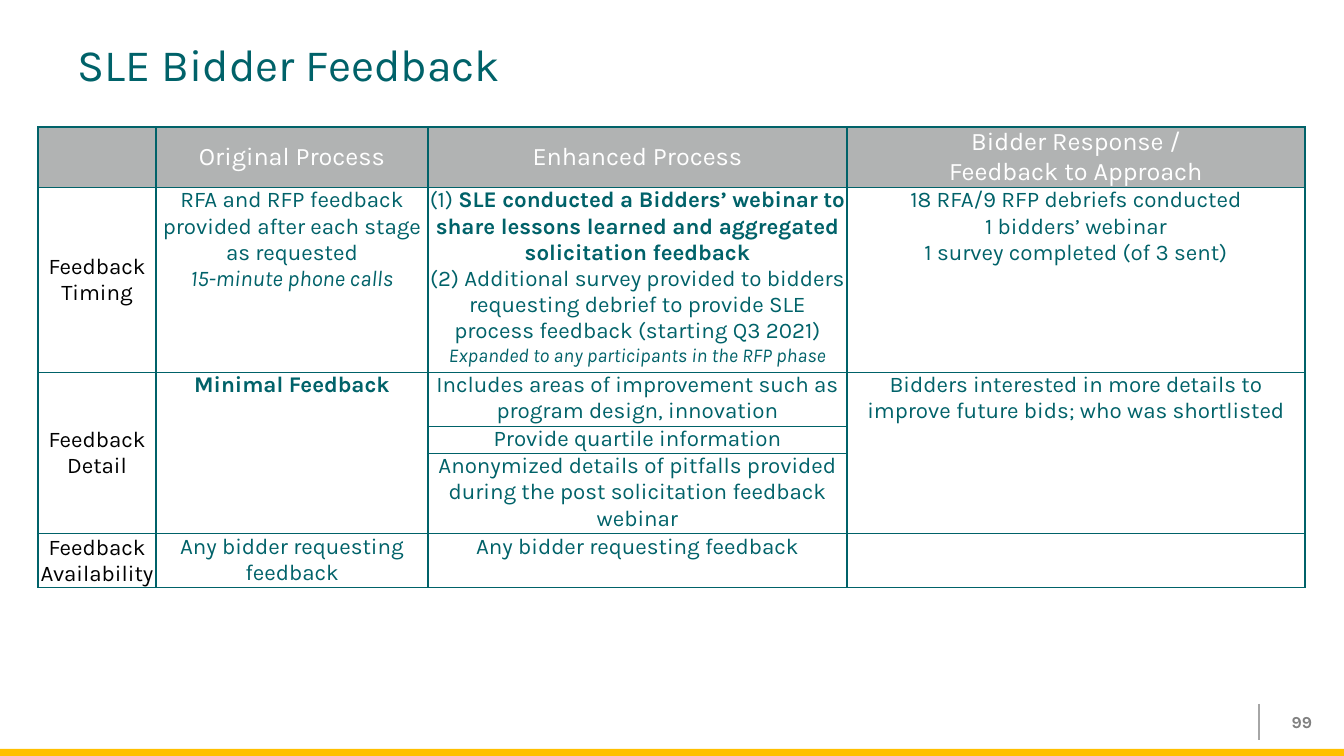
from collections import namedtuple
from pptx import Presentation
from pptx.dml.color import RGBColor
from pptx.enum.shapes import MSO_CONNECTOR as Connector, MSO_SHAPE as Shape
from pptx.enum.text import MSO_ANCHOR as Anchor, PP_ALIGN as Align
from pptx.oxml.ns import qn
from pptx.util import Pt
from lxml.etree import SubElement

TEAL = RGBColor(0x00, 0x62, 0x69)
GOLD = RGBColor(0xFF, 0xC0, 0x00)
HEADER = RGBColor(0xB1, 0xB3, 0xB3)
RULE = RGBColor(0xA6, 0xA6, 0xA6)
NUMBER = RGBColor(0x80, 0x80, 0x80)
WHITE = RGBColor(0xFF, 0xFF, 0xFF)
BLACK = RGBColor(0x00, 0x00, 0x00)
FONT = "Karla"
PX = 914400 / 100.8

Box = namedtuple("Box", "left top width height")
Line = namedtuple("Line", "text size bold italic lead", defaults=(16, False, False, ""))

COLUMNS = [118, 272, 419, 458]
ROWS = [59, 180, 54, 27, 80, 53]
HEADINGS = {
    1: [Line("Original Process", 18)],
    2: [Line("Enhanced Process", 18)],
    3: [Line("Bidder Response /", 18), Line("Feedback to Approach", 18)],
}
LABELS = {1: "Feedback Timing", 2: "Feedback Detail", 5: "Feedback Availability"}
BODY = {
    (1, 1): [Line("RFA and RFP feedback provided after each stage as requested"),
             Line("15-minute phone calls", italic=True)],
    (1, 2): [Line("SLE conducted a Bidders’ webinar to share lessons learned and "
                  "aggregated solicitation feedback", bold=True, lead="(1) "),
             Line("(2) Additional survey provided to bidders requesting debrief to "
                  "provide SLE process feedback (starting Q3 2021)"),
             Line("Expanded to any participants in the RFP phase", 14, italic=True)],
    (1, 3): [Line("18 RFA/9 RFP debriefs conducted"), Line("1 bidders’ webinar"),
             Line("1 survey completed (of 3 sent)")],
    (2, 1): [Line("Minimal Feedback", bold=True)],
    (2, 2): [Line("Includes areas of improvement such as program design, innovation")],
    (2, 3): [Line("Bidders interested in more details to improve future bids; "
                  "who was shortlisted")],
    (3, 2): [Line("Provide quartile information")],
    (4, 2): [Line("Anonymized details of pitfalls provided during the post "
                  "solicitation feedback webinar")],
    (5, 1): [Line("Any bidder requesting feedback")],
    (5, 2): [Line("Any bidder requesting feedback")],
}


def px(length):
    """Turn pixels into EMU."""
    return round(length * PX)


def emu(box):
    """Turn a pixel box into EMU values."""
    return [px(length) for length in box]


def style(font, size, color, bold=False, italic=False):
    """Set the look of a font."""
    font.name, font.size, font.bold, font.italic = FONT, Pt(size), bold, italic
    font.color.rgb = color


def write(frame, lines, color, align):
    """Fill a text frame with one paragraph per line."""
    for index, line in enumerate(lines):
        para = frame.add_paragraph() if index else frame.paragraphs[0]
        para.alignment = align
        style(para.font, line.size, color, line.bold and not line.lead, line.italic)
        if line.lead:
            para.add_run().text = line.lead
        span = para.add_run()
        span.text = line.text
        if line.lead:
            span.font.bold = line.bold


def add_text(page, box, line, color, align):
    """Place one vertically centred line of text."""
    frame = page.shapes.add_textbox(*emu(box)).text_frame
    frame.word_wrap = True
    frame.vertical_anchor = Anchor.MIDDLE
    write(frame, [line], color, align)


def add_border(cell):
    """Draw a thin line on all four sides of a cell."""
    properties = cell._tc.get_or_add_tcPr()
    for side in ("lnL", "lnR", "lnT", "lnB"):
        edge = SubElement(properties, qn(f"a:{side}"), w=str(Pt(1)))
        fill = SubElement(edge, qn("a:solidFill"))
        SubElement(fill, qn("a:srgbClr"), val=str(TEAL))


def fill_cell(cell, lines, color, anchor):
    """Write lines into a cell without margins."""
    cell.margin_left = cell.margin_right = cell.margin_top = cell.margin_bottom = 0
    cell.vertical_anchor = anchor
    write(cell.text_frame, lines, color, Align.CENTER)


def add_feedback_table(page, box):
    """Build the feedback comparison table."""
    table = page.shapes.add_table(len(ROWS), len(COLUMNS), *emu(box)).table
    table.first_row = table.horz_banding = False
    for column, width in zip(table.columns, COLUMNS):
        column.width = px(width)
    for row, height in zip(table.rows, ROWS):
        row.height = px(height)
    for index, row in enumerate(table.rows):
        for cell in row.cells:
            add_border(cell)
            cell.margin_top = cell.margin_bottom = 0
            cell.fill.solid()
            cell.fill.fore_color.rgb = WHITE if index else HEADER
    for column in (0, 1, 3):
        table.cell(2, column).merge(table.cell(4, column))
    for column, lines in HEADINGS.items():
        fill_cell(table.cell(0, column), lines, WHITE, Anchor.MIDDLE)
    for row, label in LABELS.items():
        fill_cell(table.cell(row, 0), [Line(label)], BLACK, Anchor.MIDDLE)
    for place, lines in BODY.items():
        fill_cell(table.cell(*place), lines, TEAL, Anchor.TOP)


def add_footer(page, box):
    """Draw the gold strip, the rule and the page number."""
    strip_top = box.top + box.height - 7
    strip = page.shapes.add_shape(Shape.RECTANGLE, *emu((box.left, strip_top, box.width, 7)))
    strip.shadow.inherit = False
    strip.fill.solid()
    strip.fill.fore_color.rgb = GOLD
    strip.line.fill.background()
    x = box.left + box.width - 85
    rule = page.shapes.add_connector(
        Connector.STRAIGHT, *emu((x, box.top + 2, x, box.top + 38)))
    rule.line.color.rgb = RULE
    rule.line.width = Pt(1)
    SubElement(rule._element.spPr, qn("a:effectLst"))
    add_text(page, Box(x - 13, box.top, 76, 40), Line("99", 12, True), NUMBER, Align.RIGHT)


def main():
    """Build and save the slide."""
    deck = Presentation()
    deck.slide_width, deck.slide_height = px(1344), px(756)
    page = deck.slides.add_slide(deck.slide_layouts[6])
    add_text(page, Box(68, 31, 1159, 66), Line("SLE Bidder Feedback", 32), TEAL, Align.LEFT)
    add_feedback_table(page, Box(38, 127, sum(COLUMNS), sum(ROWS)))
    add_footer(page, Box(0, 702, 1344, 54))
    deck.save("out.pptx")


if __name__ == "__main__":
    main()
